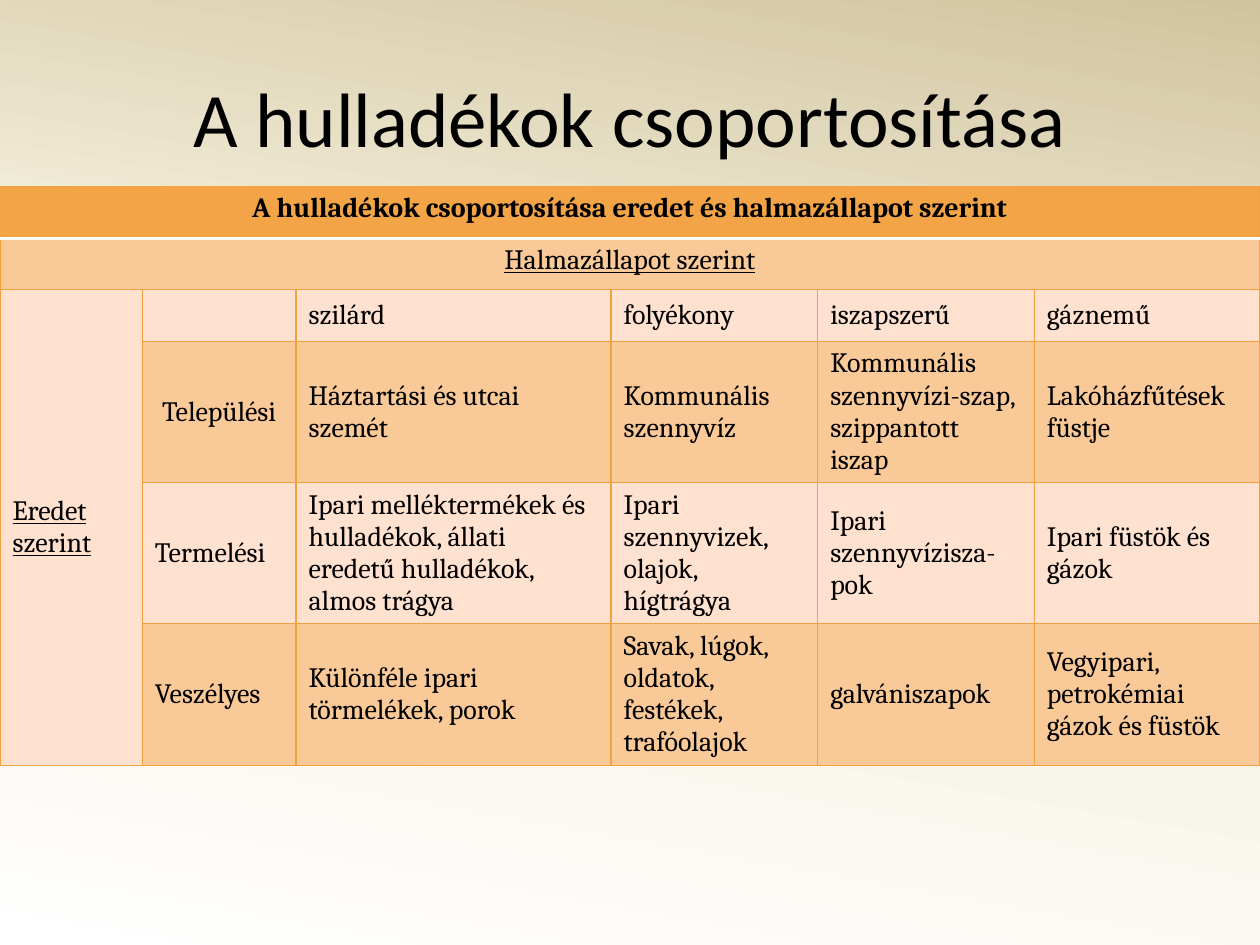
from copy import deepcopy

from lxml import etree
from pptx import Presentation
from pptx.dml.color import RGBColor
from pptx.enum.text import MSO_ANCHOR, PP_ALIGN
from pptx.oxml.ns import qn
from pptx.util import Inches, Pt

MIDDLE, TOP = MSO_ANCHOR.MIDDLE, MSO_ANCHOR.TOP
LEFT, CENTER = PP_ALIGN.LEFT, PP_ALIGN.CENTER

TITLE = "A hulladékok csoportosítása"
ROWS = [
    ["A hulladékok csoportosítása eredet és halmazállapot szerint"],
    ["Halmazállapot szerint"],
    ["Eredet szerint", "", "szilárd", "folyékony", "iszapszerű", "gáznemű"],
    ["", "Települési", "Háztartási és utcai szemét", "Kommunális szennyvíz",
     "Kommunális szennyvízi-szap, szippantott iszap", "Lakóházfűtések füstje"],
    ["", "Termelési",
     "Ipari melléktermékek és hulladékok, állati eredetű hulladékok, almos trágya",
     "Ipari szennyvizek, olajok, hígtrágya", "Ipari szennyvízisza-pok",
     "Ipari füstök és gázok"],
    ["", "Veszélyes", "Különféle ipari törmelékek, porok",
     "Savak, lúgok, oldatok, festékek, trafóolajok", "galvániszapok",
     "Vegyipari, petrokémiai gázok és füstök"],
]
WIDTHS = [1.13, 1.22, 2.5, 1.64, 1.72, 1.79]
HEIGHTS = [0.41] * 3 + [1.12] * 3
MERGES = [((0, 0), (0, 5)), ((1, 0), (1, 5)), ((2, 0), (5, 0))]

THEME = {
    "ink": "000000", "head": "F3A447", "dark": "F9C998", "light": "FFE1CF",
    "line": "F2A141", "rule": "FFFFFF",
    "back": [(0, "FFFFFF"), (0.65, "F0EBD5"), (1, "D1C39F")], "angle": 80,
    "title": {"name": "Calibri", "size": Pt(44)},
    "cell": {"name": "Cambria", "size": Pt(16)},
}
BOLD = {(0, 0)}
UNDER = {(1, 0), (2, 0)}
CENTERED = {(0, 0), (1, 0), (3, 1)}


def style(font, **values):
    for key, value in values.items():
        setattr(font, key, value)
    font.color.rgb = RGBColor.from_string(THEME["ink"])


def paint_back(slide):
    fill = slide.background.fill
    fill.gradient()
    fill.gradient_angle = THEME["angle"]
    first = fill.gradient_stops[0]._gs
    first.addnext(deepcopy(first))
    for stop, (place, color) in zip(fill.gradient_stops, THEME["back"]):
        stop.position = place
        stop.color.rgb = RGBColor.from_string(color)


def add_edge(cell, side, color, width):
    line = etree.SubElement(cell._tc.get_or_add_tcPr(), qn("a:ln" + side),
                            w=str(Pt(width)))
    fill = etree.SubElement(line, qn("a:solidFill"))
    etree.SubElement(fill, qn("a:srgbClr"), val=color)


def paint_cell(cell, row, col):
    for side in "LRTB":
        rule = (row, side) in {(0, "B"), (1, "T")}
        add_edge(cell, side, THEME["rule" if rule else "line"], 2 if rule else 0.75)
    if row == 0:
        tone = "head"
    elif row % 2 and (col > 0 or row == 1):
        tone = "dark"
    else:
        tone = "light"
    cell.fill.solid()
    cell.fill.fore_color.rgb = RGBColor.from_string(THEME[tone])


def add_grid(slide):
    frame = slide.shapes.add_table(
        len(ROWS), len(WIDTHS), Inches(0), Inches(1.48),
        Inches(sum(WIDTHS)), Inches(sum(HEIGHTS)))
    table = frame.table
    table.first_row = table.horz_banding = False
    for col, width in zip(table.columns, WIDTHS):
        col.width = Inches(width)
    for row, height in zip(table.rows, HEIGHTS):
        row.height = Inches(height)
    for start, end in MERGES:
        table.cell(*start).merge(table.cell(*end))
    for r in range(len(ROWS)):
        for c in range(len(WIDTHS)):
            paint_cell(table.cell(r, c), r, c)
    for r, texts in enumerate(ROWS):
        for c, text in enumerate(texts):
            cell, spot = table.cell(r, c), (r, c)
            cell.vertical_anchor = TOP if r < 2 else MIDDLE
            cell.text = text
            para = cell.text_frame.paragraphs[0]
            para.alignment = CENTER if spot in CENTERED else LEFT
            for run in para.runs:
                style(run.font, bold=spot in BOLD, underline=spot in UNDER,
                      **THEME["cell"])


def add_title(slide):
    title = slide.shapes.title
    box = {"left": 0.5, "top": 0.3, "width": 9, "height": 1.25}
    for key, value in box.items():
        setattr(title, key, Inches(value))
    title.text_frame.text = TITLE
    title.text_frame.vertical_anchor = MIDDLE
    para = title.text_frame.paragraphs[0]
    para.alignment = CENTER
    style(para.runs[0].font, **THEME["title"])


def main():
    deck = Presentation()
    deck.slide_width, deck.slide_height = Inches(10), Inches(7.5)
    slide = deck.slides.add_slide(deck.slide_layouts[5])
    paint_back(slide)
    add_title(slide)
    add_grid(slide)
    deck.save("out.pptx")


if __name__ == "__main__":
    main()
